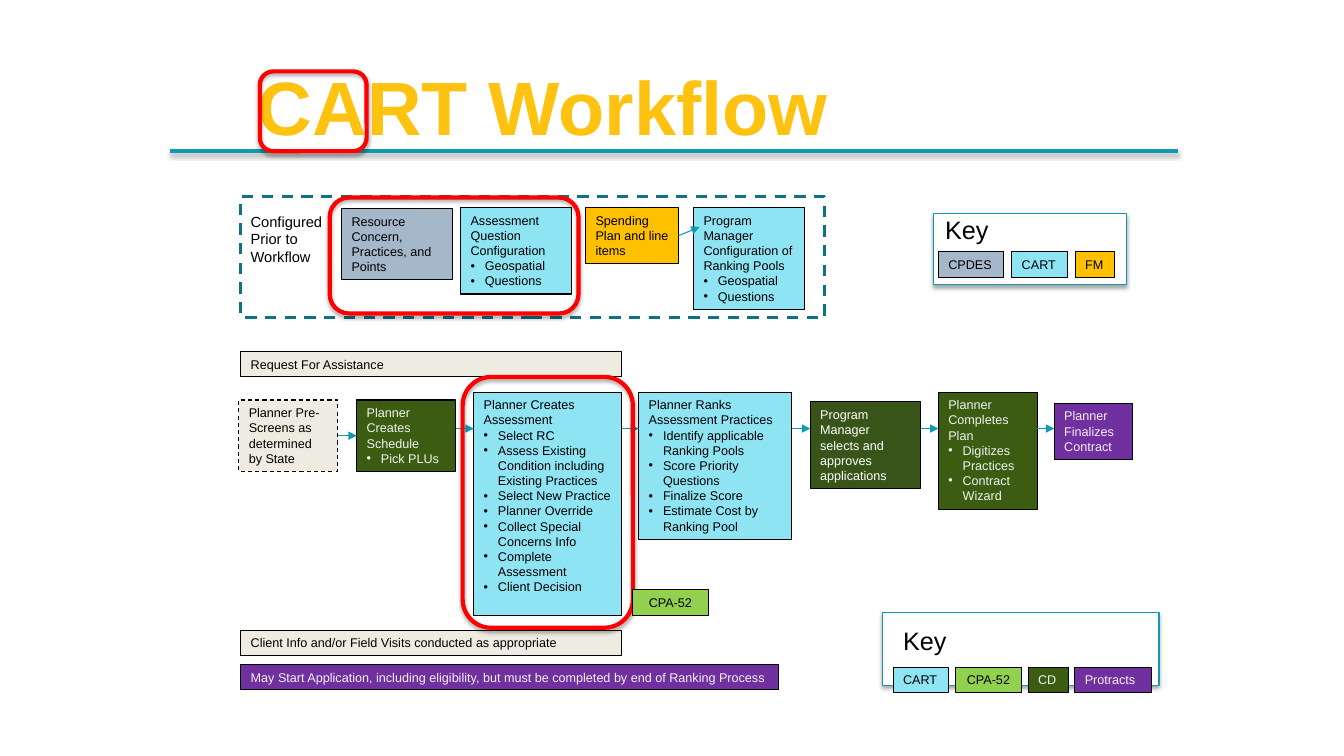
from dataclasses import dataclass

from lxml import etree
from pptx import Presentation
from pptx.dml.color import RGBColor
from pptx.enum.dml import MSO_LINE
from pptx.enum.shapes import MSO_CONNECTOR, MSO_SHAPE
from pptx.enum.text import MSO_ANCHOR, MSO_AUTO_SIZE, PP_ALIGN
from pptx.oxml.ns import qn
from pptx.util import Cm, Pt

RECTANGLE = MSO_SHAPE.RECTANGLE
ROUNDED = MSO_SHAPE.ROUNDED_RECTANGLE
STRAIGHT = MSO_CONNECTOR.STRAIGHT
DASH = MSO_LINE.DASH
LEFT, CENTER = PP_ALIGN.LEFT, PP_ALIGN.CENTER
RIGHT_SIDE, LEFT_SIDE = 3, 1


@dataclass(frozen=True)
class Theme:
    font: str = "Arial"
    title_size: float = 54
    key_size: float = 18
    label_size: float = 10.5
    box_size: float = 9
    title: str = "FEC210"
    rule: str = "139AB2"
    arrow: str = "0F99B2"
    panel: str = "0E7284"
    ring: str = "FF0000"
    black: str = "000000"
    white: str = "FFFFFF"
    pale: str = "F2F2F2"
    cart: str = "8EE4F3"
    cpdes: str = "A5B8CA"
    finance: str = "FFC000"
    planner: str = "3C5D11"
    manager: str = "395418"
    protracts: str = "7030A0"
    cpa: str = "92D050"
    neutral: str = "EEECE1"


THEME = Theme()
FONT_COLORS = {THEME.planner: THEME.pale, THEME.protracts: THEME.pale, THEME.manager: THEME.white}


def place(region, box):
    left, top, width, height = box
    return Cm(region[0] + left), Cm(region[1] + top), Cm(width), Cm(height)


def add_effects(shape, shadow):
    properties = shape._element.spPr
    effects = properties.find(qn("a:effectLst"))
    if effects is None:
        effects = etree.SubElement(properties, qn("a:effectLst"))
    if shadow:
        outer = etree.SubElement(effects, qn("a:outerShdw"), blurRad=str(Pt(3.1)),
                                 dist=str(Pt(1.8)), dir="5400000", rotWithShape="0")
        color = etree.SubElement(outer, qn("a:srgbClr"), val=THEME.black)
        etree.SubElement(color, qn("a:alpha"), val="35000")


def add_bullet(paragraph):
    properties = paragraph._p.get_or_add_pPr()
    properties.set("marL", str(Cm(0.36)))
    properties.set("indent", str(-Cm(0.36)))
    etree.SubElement(properties, qn("a:buFont"), typeface=THEME.font)
    etree.SubElement(properties, qn("a:buChar"), char="•")


def write_text(shape, lines, size, color, align=LEFT, bold=False):
    frame = shape.text_frame
    frame_format = {"word_wrap": True, "auto_size": MSO_AUTO_SIZE.NONE, "vertical_anchor": MSO_ANCHOR.TOP,
                    "margin_left": Cm(0.25), "margin_right": Cm(0.25),
                    "margin_top": Cm(0.13), "margin_bottom": Cm(0.13)}
    for name, value in frame_format.items():
        setattr(frame, name, value)
    for index, line in enumerate(lines):
        paragraph = frame.add_paragraph() if index else frame.paragraphs[0]
        paragraph.alignment = align
        if line.startswith("•"):
            add_bullet(paragraph)
        paragraph.add_run().text = line.removeprefix("•")
        for name, value in {"name": THEME.font, "size": Pt(size), "bold": bold}.items():
            setattr(paragraph.font, name, value)
        paragraph.font.color.rgb = RGBColor.from_string(color)


def add_outline(slide, region, box, fill, line, width=0.75, kind=RECTANGLE, dash=None, shadow=False):
    shape = slide.shapes.add_shape(kind, *place(region, box))
    shape.shadow.inherit = False
    if fill:
        shape.fill.solid()
        shape.fill.fore_color.rgb = RGBColor.from_string(fill)
    else:
        shape.fill.background()
    shape.line.color.rgb = RGBColor.from_string(line)
    shape.line.width = Pt(width)
    if dash:
        shape.line.dash_style = dash
    add_effects(shape, shadow)
    return shape


def add_ring(slide, region, box):
    add_outline(slide, region, box, None, THEME.ring, 3, ROUNDED, shadow=True)


def add_box(slide, region, box, fill, *lines, dash=None):
    shape = add_outline(slide, region, box, fill, THEME.black, dash=dash)
    align = CENTER if fill == THEME.cpa else LEFT
    write_text(shape, lines, THEME.box_size, FONT_COLORS.get(fill, THEME.black), align)
    return shape


def add_label(slide, region, box, text, size):
    label = slide.shapes.add_textbox(*place(region, box))
    write_text(label, [text], size, THEME.black)


def add_line(slide, start, end, color, width, shadow=False):
    connector = slide.shapes.add_connector(STRAIGHT, *start, *end)
    connector.line.color.rgb = RGBColor.from_string(color)
    connector.line.width = Pt(width)
    add_effects(connector, shadow)
    return connector


def add_arrow(slide, start, end):
    connector = add_line(slide, start, end, THEME.arrow, 0.75)
    etree.SubElement(connector.line._get_or_add_ln(), qn("a:tailEnd"), type="triangle")
    return connector


def add_title(slide, region):
    left, top, width, height = place(region, (0, 0, *region[2:]))
    add_line(slide, (left, top + height), (left + width, top + height), THEME.rule, 3, True)
    title = slide.shapes.title
    title_box = place(region, (1.25, 0, 16.28, 2.57))
    for name, value in zip(("left", "top", "width", "height"), title_box):
        setattr(title, name, value)
    write_text(title, ["CART Workflow"], THEME.title_size, THEME.title, CENTER, True)
    add_ring(slide, region, (2.26, 0.43, 2.69, 2.01))


def add_configuration(slide, region):
    add_outline(slide, region, (0, 0, *region[2:]), None, THEME.panel, 2, dash=DASH)
    add_label(slide, region, (0, 0.28, 2.41, 1.6), "Configured Prior to Workflow", THEME.label_size)
    topics = ("•Geospatial", "•Questions")
    add_box(slide, region, (2.54, 0.3, 2.79, 1.8), THEME.cpdes, "Resource Concern, Practices, and Points")
    add_box(slide, region, (5.54, 0.28, 2.79, 2.18), THEME.cart, "Assessment Question Configuration", *topics)
    spending = add_box(slide, region, (8.69, 0.28, 2.34, 1.42), THEME.finance, "Spending Plan and line items")
    add_box(slide, region, (11.41, 0.28, 2.79, 2.57), THEME.cart,
            "Program Manager Configuration of Ranking Pools", *topics)
    target = place(region, (11.56, 0.77, 0, 0))[:2]
    arrow = add_arrow(slide, target, target)
    arrow.begin_connect(spending, RIGHT_SIDE)
    add_ring(slide, region, (2.24, 0.03, 6.27, 2.92))


def add_workflow(slide, region):
    bars = [
        (0, 9.6, THEME.neutral, "Request For Assistance"),
        (7.02, 9.6, THEME.neutral, "Client Info and/or Field Visits conducted as appropriate"),
        (7.88, 13.56, THEME.protracts,
         "May Start Application, including eligibility, but must be completed by end of Ranking Process"),
    ]
    for top, width, fill, text in bars:
        add_box(slide, region, (0.05, top, width, 0.64), fill, text)
    steps = [
        ((0, 1.22, 2.49, 1.8), THEME.neutral, "Planner Pre-Screens as determined by State"),
        ((2.97, 1.22, 2.49, 1.8), THEME.planner, "Planner Creates Schedule", "•Pick PLUs"),
        ((5.92, 1.02, 3.73, 5.64), THEME.cart, "Planner Creates Assessment", "•Select RC",
         "•Assess Existing Condition including Existing Practices", "•Select New Practice",
         "•Planner Override", "•Collect Special Concerns Info", "•Complete Assessment", "•Client Decision"),
        ((10.08, 1.02, 3.86, 3.71), THEME.cart, "Planner Ranks Assessment Practices",
         "•Identify applicable Ranking Pools", "•Score Priority Questions", "•Finalize Score",
         "•Estimate Cost by Ranking Pool"),
        ((14.4, 1.27, 2.79, 2.18), THEME.manager, "Program Manager selects and approves applications"),
        ((17.63, 1.02, 2.49, 2.95), THEME.planner, "Planner Completes Plan",
         "•Digitizes Practices", "•Contract Wizard"),
        ((20.55, 1.3, 1.96, 1.42), THEME.protracts, "Planner Finalizes", "Contract"),
    ]
    boxes = [add_box(slide, region, *step, dash=None if index else DASH) for index, step in enumerate(steps)]
    arrow_top = Cm(region[1] + 1.94)
    for index, (before, after) in enumerate(zip(boxes, boxes[1:])):
        arrow = add_arrow(slide, (before.left + before.width, arrow_top), (after.left, arrow_top))
        if index == 0:
            arrow.begin_connect(before, RIGHT_SIDE)
            arrow.end_connect(after, LEFT_SIDE)
    add_ring(slide, region, (5.64, 0.64, 4.29, 6.32))
    add_box(slide, region, (9.91, 6, 1.93, 0.64), THEME.cpa, "CPA-52")


def add_key(slide, region, label_at, chip_at, gap, chips):
    add_outline(slide, region, (0, 0, *region[2:]), THEME.white, THEME.arrow, shadow=True)
    add_label(slide, region, (*label_at, 2.03, 1.02), "Key", THEME.key_size)
    left, top = chip_at
    for text, fill, width in chips:
        add_box(slide, region, (left, top, width, 0.64), fill, text)
        left += width + gap


def main():
    presentation = Presentation()
    presentation.slide_width, presentation.slide_height = Cm(33.87), Cm(19.05)
    slide = presentation.slides.add_slide(presentation.slide_layouts[5])
    add_title(slide, (4.29, 1.37, 25.4, 2.44))
    add_configuration(slide, (6.07, 4.95, 14.71, 3.05))
    add_workflow(slide, (6.02, 8.86, 22.51, 8.51))
    add_key(slide, (23.52, 5.38, 4.88, 1.8), (0.05, -0.1), (0.13, 0.97), 0.2,
            [("CPDES", THEME.cpdes, 1.65), ("CART", THEME.cart, 1.4), ("FM", THEME.finance, 0.99)])
    add_key(slide, (22.23, 15.44, 6.98, 1.83), (0.28, 0.18), (0.28, 1.37), 0.16,
            [("CART", THEME.cart, 1.4), ("CPA-52", THEME.cpa, 1.68),
             ("CD", THEME.planner, 1.02), ("Protracts", THEME.protracts, 1.93)])
    presentation.save("out.pptx")


if __name__ == "__main__":
    main()
